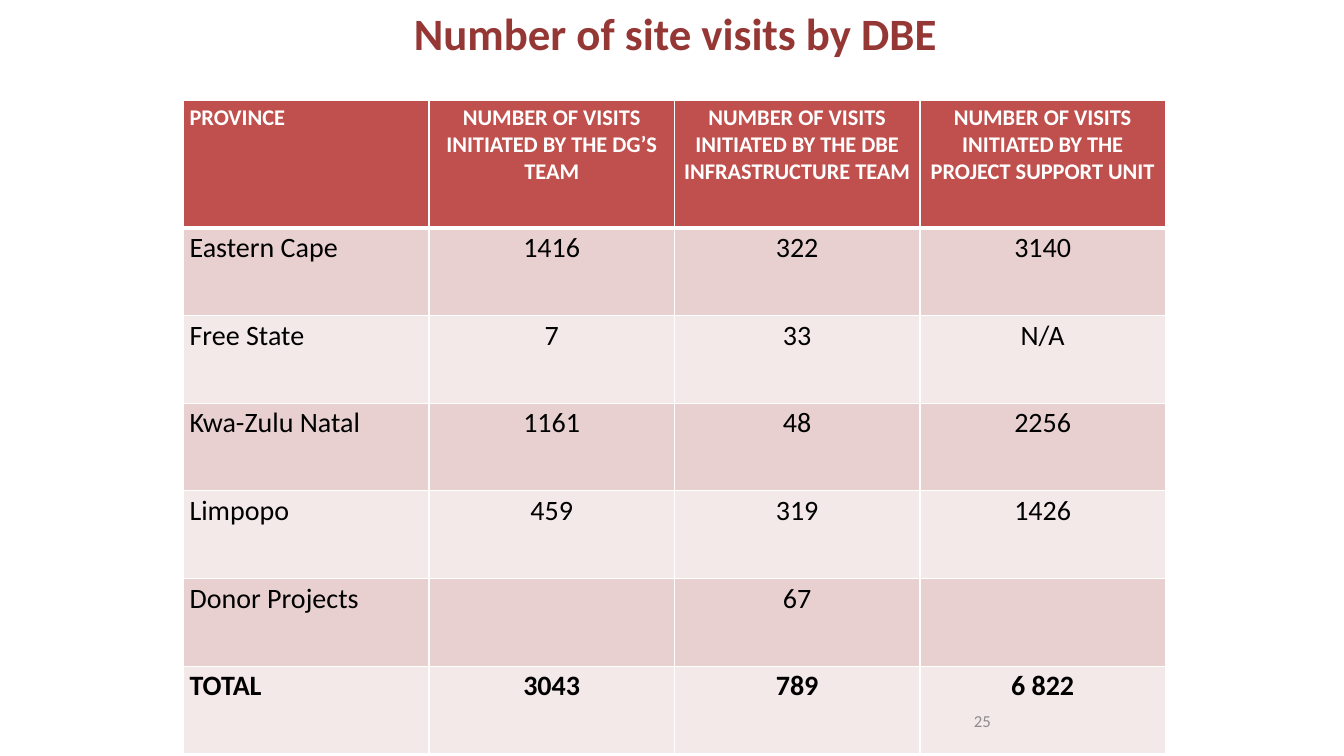
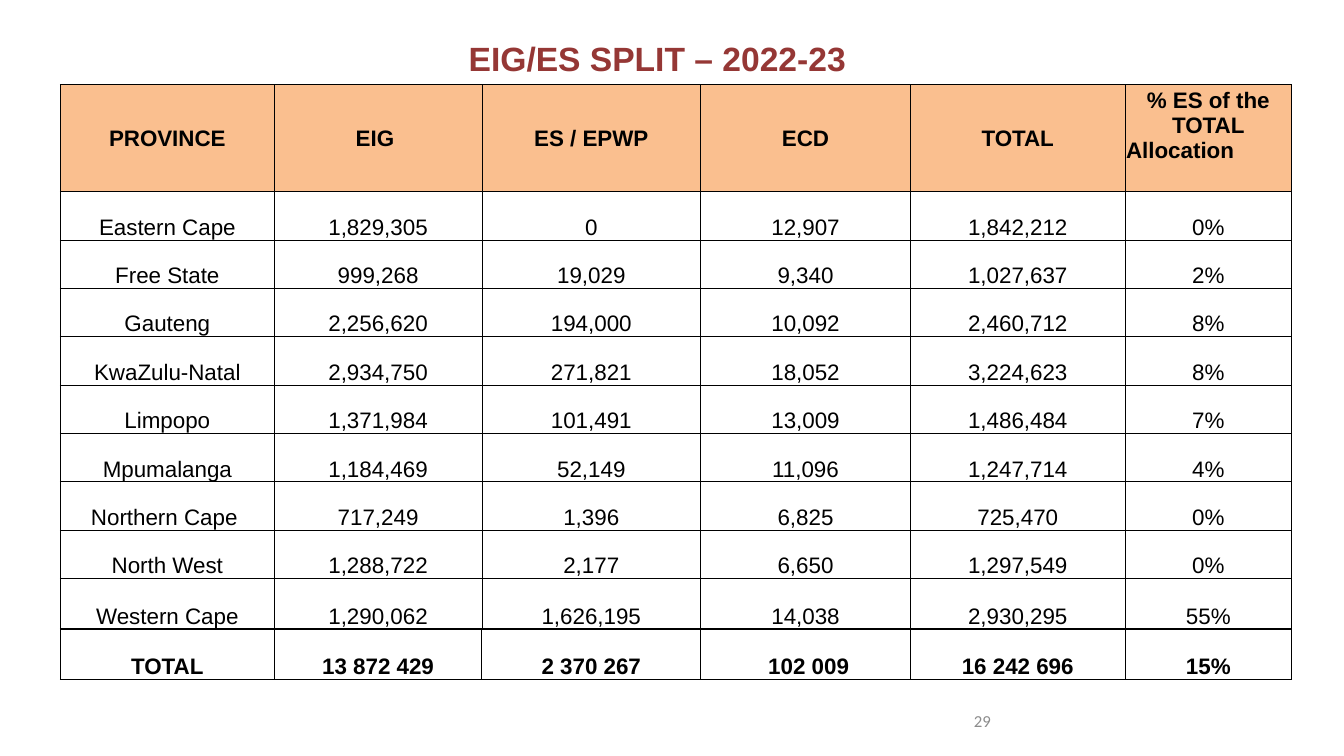
"""Build two table slides: site visits by province and the 2022-23 allocation split."""
import pptx
import pptx.dml.color
import pptx.enum.text
import pptx.oxml
import pptx.oxml.ns
import pptx.util

Inches = pptx.util.Inches
Pt = pptx.util.Pt
ALIGN = pptx.enum.text.PP_ALIGN
ANCHOR = pptx.enum.text.MSO_ANCHOR

COLORS = {
    "title": "953735", "number": "8C8C8C", "white": "FFFFFF", "black": "000000",
    "red": "C0504D", "pink": "E8D0D0", "pale": "F4E9E9", "orange": "FABF8F",
}

VISITS = [
    ("PROVINCE", "NUMBER OF VISITS INITIATED BY THE DG’S TEAM",
     "NUMBER OF VISITS INITIATED BY THE DBE INFRASTRUCTURE TEAM",
     "NUMBER OF VISITS INITIATED BY THE PROJECT SUPPORT UNIT"),
    ("Eastern Cape", "1416", "322", "3140"),
    ("Free State", "7", "33", "N/A"),
    ("Kwa-Zulu Natal", "1161", "48", "2256"),
    ("Limpopo", "459", "319", "1426"),
    ("Donor Projects", "", "67", ""),
    ("TOTAL", "3043", "789", "6 822"),
]

SPLIT = [
    ("PROVINCE", "EIG ", "ES / EPWP", "ECD", "TOTAL", "% ES of the TOTAL\nAllocation"),
    ("Eastern Cape", "1,829,305", "0", "12,907", "1,842,212", "0%"),
    ("Free State", "999,268", "19,029", "9,340", "1,027,637", "2%"),
    ("Gauteng", "2,256,620", "194,000", "10,092", "2,460,712", "8%"),
    ("KwaZulu-Natal", "2,934,750", "271,821", "18,052", "3,224,623", "8%"),
    ("Limpopo", "1,371,984", "101,491", "13,009", "1,486,484", "7%"),
    ("Mpumalanga", "1,184,469", "52,149", "11,096", "1,247,714", "4%"),
    ("Northern Cape ", "717,249", "1,396", "6,825", "725,470", "0%"),
    ("North West", "1,288,722", "2,177", "6,650", "1,297,549", "0%"),
    ("Western Cape", "1,290,062", "1,626,195", "14,038", "2,930,295", "55%"),
    ("TOTAL", "13 872 429", "2 370 267", " 102 009", "16 242 696", "15%"),
]

SLIDES = [
    {
        "title": "Number of site visits by DBE", "title_at": (1.83, 0.04, 9.74, 0.56),
        "title_size": 32, "number": "25", "font": "Calibri",
        "rows": VISITS, "at": (1.82, 1), "widths": [9.74 / 4] * 4,
        "heights": [1.26] + [0.87] * 6,
        "head_size": 16, "head_color": "white", "head_fill": "red",
        "body_size": 20, "bands": ("pink", "pale"), "first_align": ALIGN.LEFT,
        "head_anchor": ANCHOR.TOP, "body_anchor": ANCHOR.TOP,
        "margins": (0.06, 0.03, 0.06, 0.03),
        "line": "white", "thin": 1, "total_line": 1, "across": {1: 3}, "down": {},
    },
    {
        "title": "EIG/ES SPLIT – 2022-23", "title_at": (2.02, 0.24, 9, 0.68),
        "title_size": 24, "number": "29", "font": "Arial",
        "rows": SPLIT, "at": (0.6, 0.84), "widths": [2.12, 2.06, 2.17, 2.08, 2.13, 1.65],
        "heights": [1.06] + [0.48] * 8 + [0.5] * 2,
        "head_size": 16, "head_color": "black", "head_fill": "orange",
        "body_size": 16, "bands": ("white", "white"), "first_align": ALIGN.CENTER,
        "head_anchor": ANCHOR.MIDDLE, "body_anchor": ANCHOR.BOTTOM,
        "margins": (0.01, 0.01, 0.01, 0),
        "line": "black", "thin": 0.5, "total_line": 1,
        "across": {0: 1, 1: 1, 10: 1, 11: 1}, "down": {0: 1, 6: 1},
    },
]


def rgb(name):
    return pptx.dml.color.RGBColor.from_string(COLORS[name])


def write(tf, text, font="Calibri", size=12, color="black", bold=False, align=ALIGN.LEFT):
    tf.word_wrap = True
    for i, line in enumerate(text.split("\n")):
        p = tf.add_paragraph() if i else tf.paragraphs[0]
        p.alignment = ALIGN.LEFT if i else align
        r = p.add_run()
        r.text = line
        r.font.name, r.font.size, r.font.bold = font, Pt(size), bold
        r.font.color.rgb = rgb(color)


def add_text(s, at, text, **fmt):
    tf = s.shapes.add_textbox(*map(Inches, at)).text_frame
    tf.vertical_anchor = ANCHOR.MIDDLE
    write(tf, text, **fmt)


def set_borders(cell, color, **widths):
    for side, width in widths.items():
        cell._tc.get_or_add_tcPr().append(pptx.oxml.parse_xml(
            f'<a:ln{side} {pptx.oxml.ns.nsdecls("a")} w="{Pt(width)}"><a:solidFill>'
            f'<a:srgbClr val="{COLORS[color]}"/></a:solidFill></a:ln{side}>'))


def add_grid(s, d):
    rows, widths, heights = d["rows"], d["widths"], d["heights"]
    size = (sum(widths), sum(heights))
    table = s.shapes.add_table(len(rows), len(widths), *map(Inches, d["at"] + size)).table
    table.horz_banding = False
    for column, width in zip(table.columns, widths):
        column.width = Inches(width)
    for row, height in zip(table.rows, heights):
        row.height = Inches(height)
    for i, values in enumerate(rows):
        head, total = i == 0, i == len(rows) - 1
        for j, text in enumerate(values):
            cell = table.cell(i, j)
            left, top, right, bottom = map(Inches, d["margins"])
            cell.margin_left, cell.margin_top = left, top
            cell.margin_right = right
            cell.margin_bottom = Inches(0.25) if "\n" in text else bottom
            cell.vertical_anchor = d["head_anchor" if head else "body_anchor"]
            thin = d["total_line"] if total else d["thin"]
            set_borders(cell, d["line"],
                        L=d["down"].get(j, thin), R=d["down"].get(j + 1, thin),
                        T=d["across"].get(i, d["thin"]), B=d["across"].get(i + 1, d["thin"]))
            cell.fill.solid()
            cell.fill.fore_color.rgb = rgb(d["head_fill"] if head else d["bands"][(i - 1) % 2])
            if text:
                write(cell.text_frame, text, font=d["font"], bold=head or total,
                      size=d["head_size" if head else "body_size"],
                      color=d["head_color"] if head else "black",
                      align=ALIGN.CENTER if j else d["first_align"])


def main():
    prs = pptx.Presentation()
    prs.slide_width, prs.slide_height = Inches(13.33), Inches(7.5)
    for d in SLIDES:
        s = prs.slides.add_slide(prs.slide_layouts[6])
        add_text(s, d["title_at"], d["title"], font=d["font"], size=d["title_size"],
                 color="title", bold=True, align=ALIGN.CENTER)
        add_grid(s, d)
        add_text(s, (9.56, 6.95, 3.11, 0.4), d["number"], color="number")
    prs.save("out.pptx")


if __name__ == "__main__":
    main()
